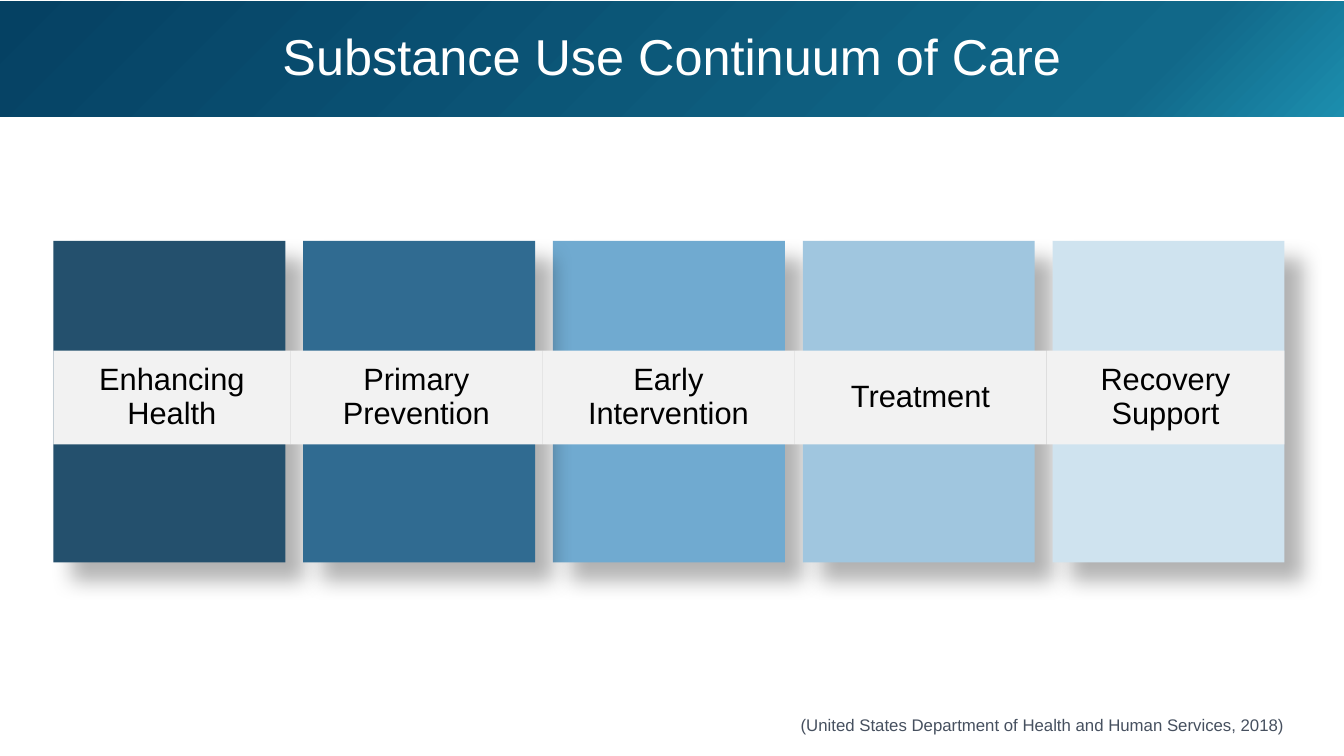
import pptx
import pptx.util
import pptx.dml.color
import pptx.enum.shapes
import pptx.enum.text
import pptx.oxml
import pptx.oxml.ns

Inches = pptx.util.Inches
RGB = pptx.dml.color.RGBColor
ALIGN = pptx.enum.text.PP_ALIGN

WHITE = RGB(0xFF, 0xFF, 0xFF)
BLACK = RGB(0, 0, 0)
SLATE = RGB(0x46, 0x50, 0x5F)
PALE = RGB(0xF2, 0xF2, 0xF2)
TEAL = RGB(0x1C, 0x8E, 0xAE)
OCEAN = RGB(0x11, 0x68, 0x89)
NAVY = RGB(0x05, 0x41, 0x63)

STAGES = [
    ("Enhancing Health", RGB(0x24, 0x50, 0x6D)),
    ("Primary Prevention", RGB(0x30, 0x6B, 0x91)),
    ("Early Intervention", RGB(0x70, 0xAA, 0xD0)),
    ("Treatment", RGB(0xA0, 0xC6, 0xDF)),
    ("Recovery Support", RGB(0xCF, 0xE3, 0xEF)),
]
NS = pptx.oxml.ns.nsdecls("a")


def add_rect(slide, left, top, width, height, fill=None):
    rect = slide.shapes.add_shape(
        pptx.enum.shapes.MSO_SHAPE.RECTANGLE,
        Inches(left), Inches(top), Inches(width), Inches(height))
    rect.shadow.inherit = False
    rect.line.fill.background()
    if fill is not None:
        rect.fill.solid()
        rect.fill.fore_color.rgb = fill
    return rect


def add_text(shape, text, size=22, color=BLACK, align=ALIGN.CENTER, space=0.9):
    frame = shape.text_frame
    frame.word_wrap = True
    frame.vertical_anchor = pptx.enum.text.MSO_ANCHOR.MIDDLE
    para = frame.paragraphs[0]
    para.alignment = align
    para.line_spacing = space
    run = para.add_run()
    run.text = text
    run.font.name = "Arial"
    run.font.size = pptx.util.Pt(size)
    run.font.color.rgb = color
    return frame


def add_fade(shape, stops, angle):
    """Fill the shape with a linear gradient; the angle runs clockwise."""
    marks = "".join(
        f'<a:gs pos="{pos * 1000}"><a:srgbClr val="{color}"/></a:gs>'
        for pos, color in stops)
    fade = pptx.oxml.parse_xml(
        f'<a:gradFill {NS} rotWithShape="1"><a:gsLst>{marks}</a:gsLst>'
        f'<a:lin ang="{angle * 60000}" scaled="0"/></a:gradFill>')
    props = shape.element.spPr
    props.insert(props.index(props.find(pptx.oxml.ns.qn("a:ln"))), fade)


def add_shade(shape, blur=15, dist=18, angle=45, alpha=30):
    """Give the shape a soft black shadow."""
    effects = shape.element.spPr.find(pptx.oxml.ns.qn("a:effectLst"))
    effects.append(pptx.oxml.parse_xml(
        f'<a:outerShdw {NS} blurRad="{pptx.util.Pt(blur)}" '
        f'dist="{pptx.util.Pt(dist)}" dir="{angle * 60000}" algn="tl" '
        f'rotWithShape="0"><a:srgbClr val="{BLACK}">'
        f'<a:alpha val="{alpha * 1000}"/></a:srgbClr></a:outerShdw>'))


def draw_title(slide, left, top, width, height):
    banner = add_rect(slide, left, top, width, height)
    add_fade(banner, [(0, TEAL), (16, OCEAN), (100, NAVY)], 225)
    add_text(banner, "Substance Use Continuum of Care", size=36, color=WHITE)


def draw_bars(slide, left, top, width, height, bar=2.3):
    pitch = (width - bar) / (len(STAGES) - 1)
    # The middle bar lies lowest, under its neighbour's shadow
    for i in (2, 0, 1, 3, 4):
        rect = add_rect(slide, left + i * pitch, top, bar, height, STAGES[i][1])
        add_shade(rect)


def draw_labels(slide, left, top, width, height, first=2.35, pitch=2.5):
    inner = [left + first + i * pitch for i in range(len(STAGES) - 1)]
    edges = [left, *inner, left + width]
    for (name, _), start, end in zip(STAGES, edges, edges[1:]):
        add_text(add_rect(slide, start, top, end - start, height, PALE), name)


def draw_credit(slide, left, top, width, height):
    box = slide.shapes.add_textbox(
        Inches(left), Inches(top), Inches(width), Inches(height))
    frame = add_text(
        box, "(United States Department of Health and Human Services, 2018)",
        size=12, color=SLATE, align=ALIGN.RIGHT, space=1.0)
    frame.margin_right = 0


def main():
    deck = pptx.Presentation()
    deck.slide_width = Inches(13.33)
    deck.slide_height = Inches(7.5)
    slide = deck.slides.add_slide(deck.slide_layouts[6])
    draw_title(slide, 0, 0.02, 13.33, 1.14)
    draw_bars(slide, 0.53, 2.39, 12.21, 3.19)
    draw_labels(slide, 0.53, 3.48, 12.21, 0.93)
    draw_credit(slide, 7.16, 6.99, 5.58, 0.4)
    deck.save("out.pptx")


if __name__ == "__main__":
    main()
